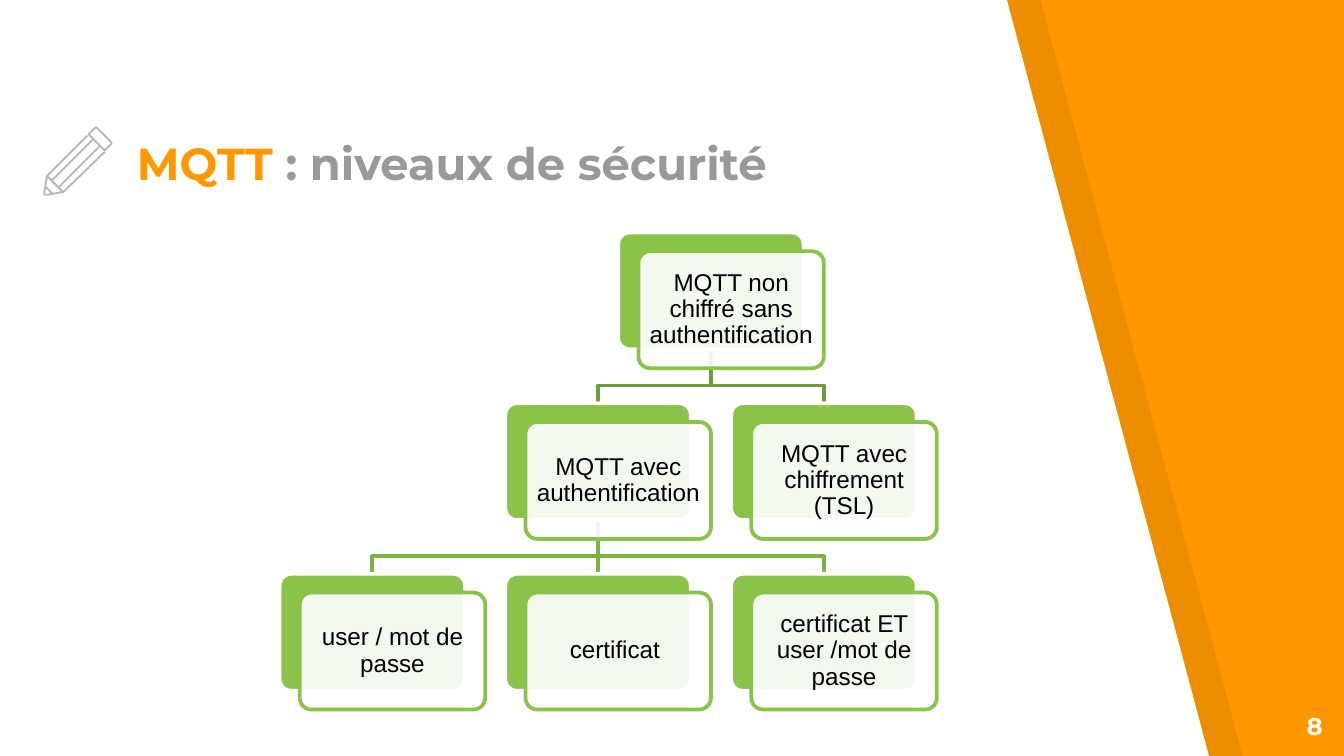
from dataclasses import dataclass

from lxml.etree import SubElement
from pptx import Presentation
from pptx.dml.color import RGBColor
from pptx.enum.shapes import MSO_CONNECTOR, MSO_SHAPE
from pptx.enum.text import MSO_ANCHOR, PP_ALIGN
from pptx.oxml.ns import qn
from pptx.util import Inches, Pt


@dataclass(frozen=True)
class Theme:
    orange: str = "FF9800"
    black: str = "000000"
    white: str = "FFFFFF"
    grey: str = "999999"
    pencil: str = "B7B7B7"
    green: str = "8BC34A"
    links: tuple = ("6F9C3B", "7EB143")  # by level of the parent
    head: str = "Montserrat"
    body: str = "Arial"
    big: int = 24
    small: int = 13
    thin: float = 0.96
    thick: int = 2


T = Theme()

# Card grid: columns are half a step apart
LEFT, TOP = 2.08, 1.73
HALF, ROW = 0.84, 1.27
WIDE, HIGH = 1.38, 0.87
SHIFT, DROP = 0.15, 0.14

# name: (column, row, parent, text)
CARDS = {
    "plain": (3, 0, None, "MQTT non chiffré sans authentification"),
    "auth": (2, 1, "plain", "MQTT avec authentification"),
    "user": (0, 2, "auth", "user / mot de passe"),
    "cert": (2, 2, "auth", "certificat "),
    "both": (4, 2, "auth", "certificat ET user /mot de passe"),
    "tls": (4, 1, "plain", "MQTT avec chiffrement (TSL)"),
}

# Pencil strokes: eraser, edges of the body, tip
PENCIL = [
    [(0.66, 1), (0.7, 0.96), (0.71, 0.95), (0.72, 0.95), (0.73, 0.96),
     (0.82, 1.05), (0.83, 1.06), (0.83, 1.07), (0.82, 1.08), (0.78, 1.12),
     (0.66, 1)],
    [(0.74, 1.09), (0.44, 1.39)],
    [(0.65, 1.01), (0.35, 1.31), (0.33, 1.43), (0.33, 1.45), (0.35, 1.45),
     (0.46, 1.43), (0.47, 1.43), (0.78, 1.13)],
    [(0.39, 1.34), (0.69, 1.04)],
    [(0.39, 1.44), (0.34, 1.39)],
    [(0.35, 1.31), (0.47, 1.43)],
]


def rgb(code):
    return RGBColor.from_string(code)


def paint(shape, fill=None, line=None, width=T.thick, alpha=None):
    """Set fill, opacity in percent and outline; drop the shadow."""
    shape.shadow.inherit = False
    if fill:
        shape.fill.solid()
        shape.fill.fore_color.rgb = rgb(fill)
        if alpha:
            color = shape._element.spPr.find(qn("a:solidFill"))[0]
            SubElement(color, qn("a:alpha"), val=str(alpha * 1000))
    else:
        shape.fill.background()
    if line:
        shape.line.color.rgb = rgb(line)
        shape.line.width = Pt(width)
    else:
        shape.line.fill.background()


def draw(slide, points, close=False):
    """Outline through points given in inches."""
    spots = [(Inches(x), Inches(y)) for x, y in points]
    pen = slide.shapes.build_freeform(*spots[0])
    pen.add_line_segments(spots[1:], close=close)
    return pen.convert_to_shape()


def label(slide, box, runs, size, align, anchor):
    """Bold text box; runs are (text, colour) pairs."""
    frame = slide.shapes.add_textbox(*map(Inches, box)).text_frame
    frame.word_wrap = True
    frame.vertical_anchor = anchor
    frame.margin_left = frame.margin_right = Inches(0.1)
    frame.margin_top = frame.margin_bottom = Inches(0.1)
    para = frame.paragraphs[0]
    para.alignment = align
    para.font.name, para.font.size, para.font.bold = T.head, Pt(size), True
    for text, color in runs:
        run = para.add_run()
        run.text = text
        run.font.color.rgb = rgb(color)


def plate(slide, x, y, **look):
    shape = slide.shapes.add_shape(
        MSO_SHAPE.ROUNDED_RECTANGLE,
        Inches(x), Inches(y), Inches(WIDE), Inches(HIGH))
    shape.adjustments[0] = 0.1
    paint(shape, **look)
    return shape


def card(slide, col, row, text):
    """Green plate with a see-through text plate on it; returns the green one."""
    x, y = LEFT + col * HALF, TOP + row * ROW
    back = plate(slide, x, y, fill=T.green, line=T.white)
    front = plate(slide, x + SHIFT, y + DROP,
                  fill=T.white, line=T.green, alpha=90)
    frame = front.text_frame
    frame.word_wrap = True
    frame.vertical_anchor = MSO_ANCHOR.MIDDLE
    frame.margin_left = frame.margin_right = Inches(0.04)
    frame.margin_top = frame.margin_bottom = Inches(0.04)
    para = frame.paragraphs[0]
    para.text = text
    para.alignment = PP_ALIGN.CENTER
    para.line_spacing = 0.9
    para.font.name, para.font.size = T.body, Pt(T.small)
    para.font.color.rgb = rgb(T.black)
    return back


def link(slide, start, end, backs):
    """Line from parent to child: straight in one column, else an elbow."""
    (col, row), (goal, _) = CARDS[start][:2], CARDS[end][:2]
    color = T.links[row]
    if col == goal:
        line = slide.shapes.add_connector(MSO_CONNECTOR.STRAIGHT, 0, 0, 0, 0)
        line.begin_connect(backs[start], 2)
        line.end_connect(backs[end], 0)
        line.line.color.rgb = rgb(color)
        line.line.width = Pt(T.thick)
        SubElement(line._element.spPr, qn("a:effectLst"))
        return line
    x, to = (LEFT + c * HALF + WIDE / 2 for c in (col, goal))
    y = TOP + row * ROW + HIGH
    bend = y + 0.27
    line = draw(slide, [(x, y), (x, bend), (to, bend), (to, y + ROW - HIGH)])
    paint(line, line=color)
    return line


def main():
    deck = Presentation()
    deck.slide_width = Inches(10)
    deck.slide_height = Inches(10) * 9 // 16
    slide = deck.slides.add_slide(deck.slide_layouts[6])

    # Orange background, slanted shade and white page
    slide.background.fill.solid()
    slide.background.fill.fore_color.rgb = rgb(T.orange)
    for x, color, alpha in ((0.25, T.black, 7), (0, T.white, None)):
        page = draw(slide, [(x, -0.01), (x, 5.64), (x + 9, 5.64),
                            (x + 7.49, -0.01)], close=True)
        paint(page, fill=color, alpha=alpha)

    # Title, pencil and page number
    label(slide, (0.92, 0.98, 5.82, 0.53),
          [("MQTT ", T.orange), (": niveaux de sécurité", T.grey)],
          T.big, PP_ALIGN.LEFT, MSO_ANCHOR.BOTTOM)
    for points in PENCIL:
        paint(draw(slide, points, close=points[0] == points[-1]),
              line=T.pencil, width=T.thin)
    label(slide, (9.34, 5.19, 0.6, 0.43), [("8", T.white)],
          T.small, PP_ALIGN.RIGHT, MSO_ANCHOR.TOP)

    # Cards, then their links placed behind them
    backs = {name: card(slide, col, row, text)
             for name, (col, row, _, text) in CARDS.items()}
    for name, (_, _, parent, _) in CARDS.items():
        if parent:
            line = link(slide, parent, name, backs)
            backs["plain"]._element.addprevious(line._element)

    deck.save("out.pptx")


if __name__ == "__main__":
    main()
